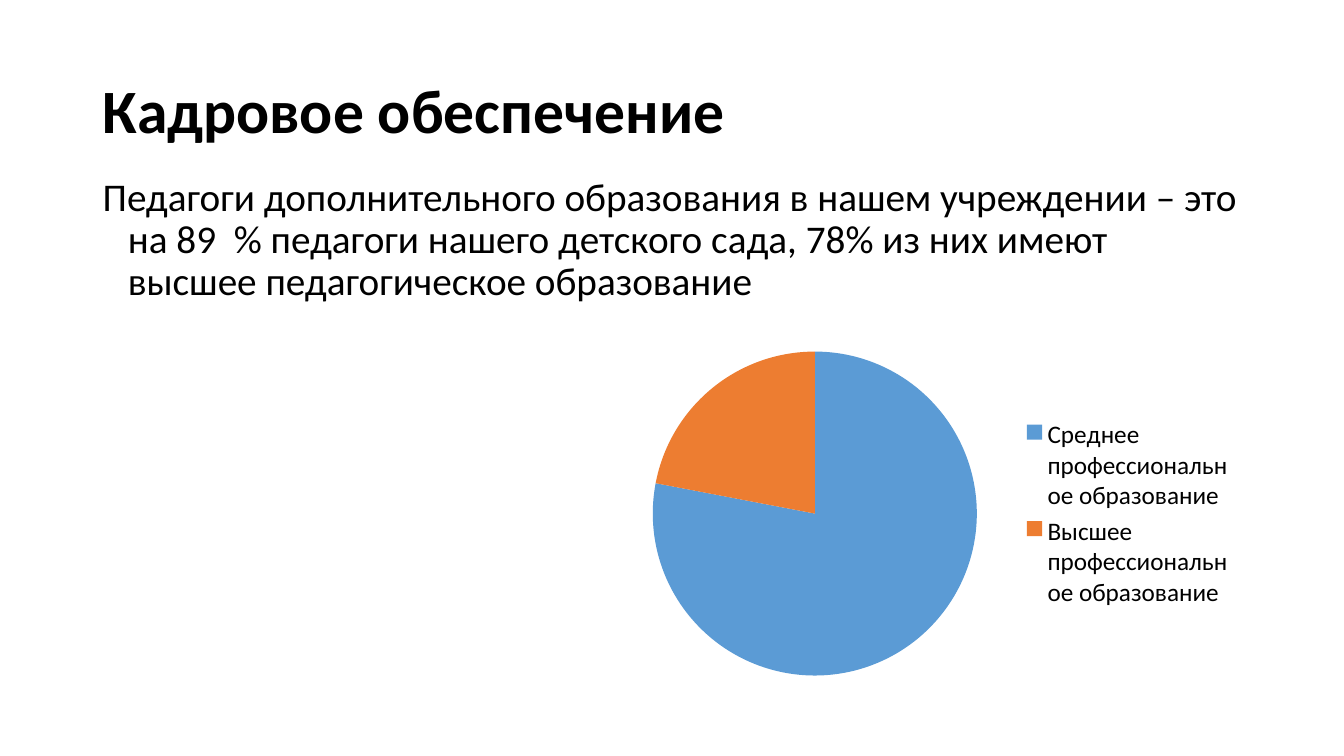
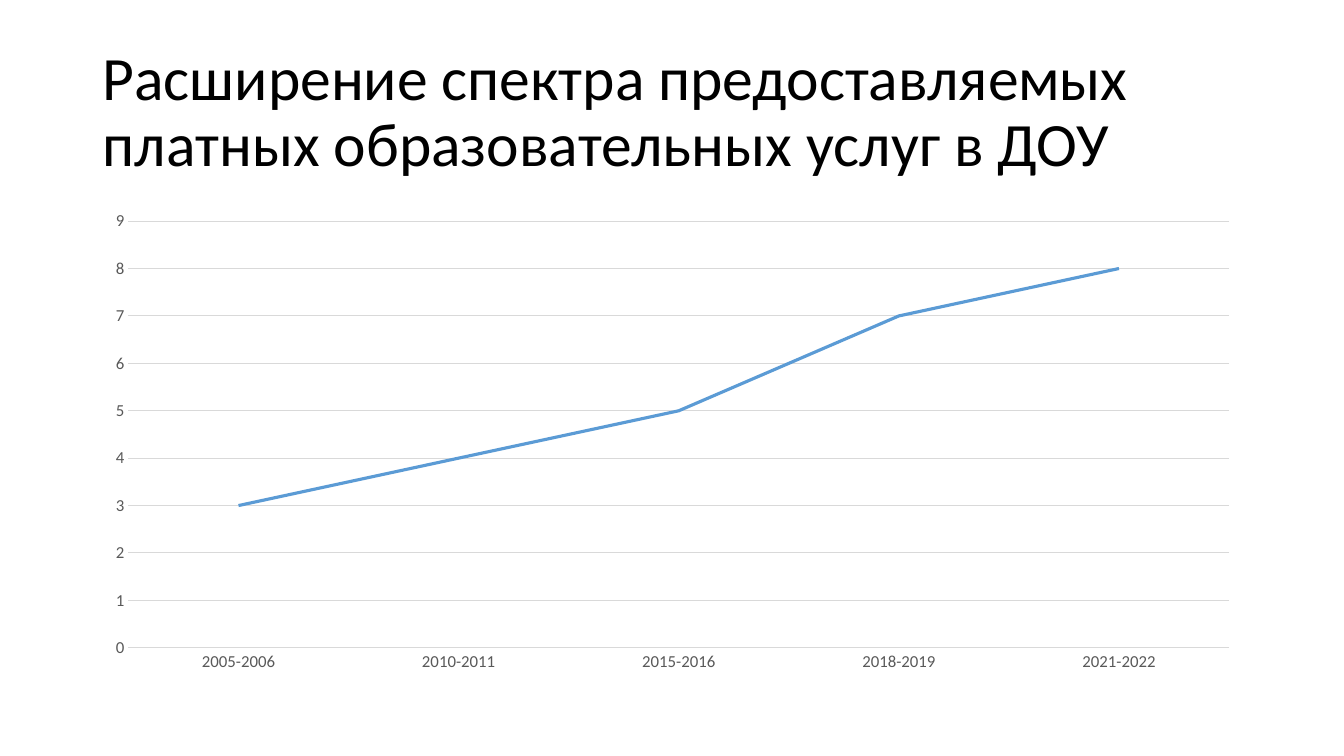
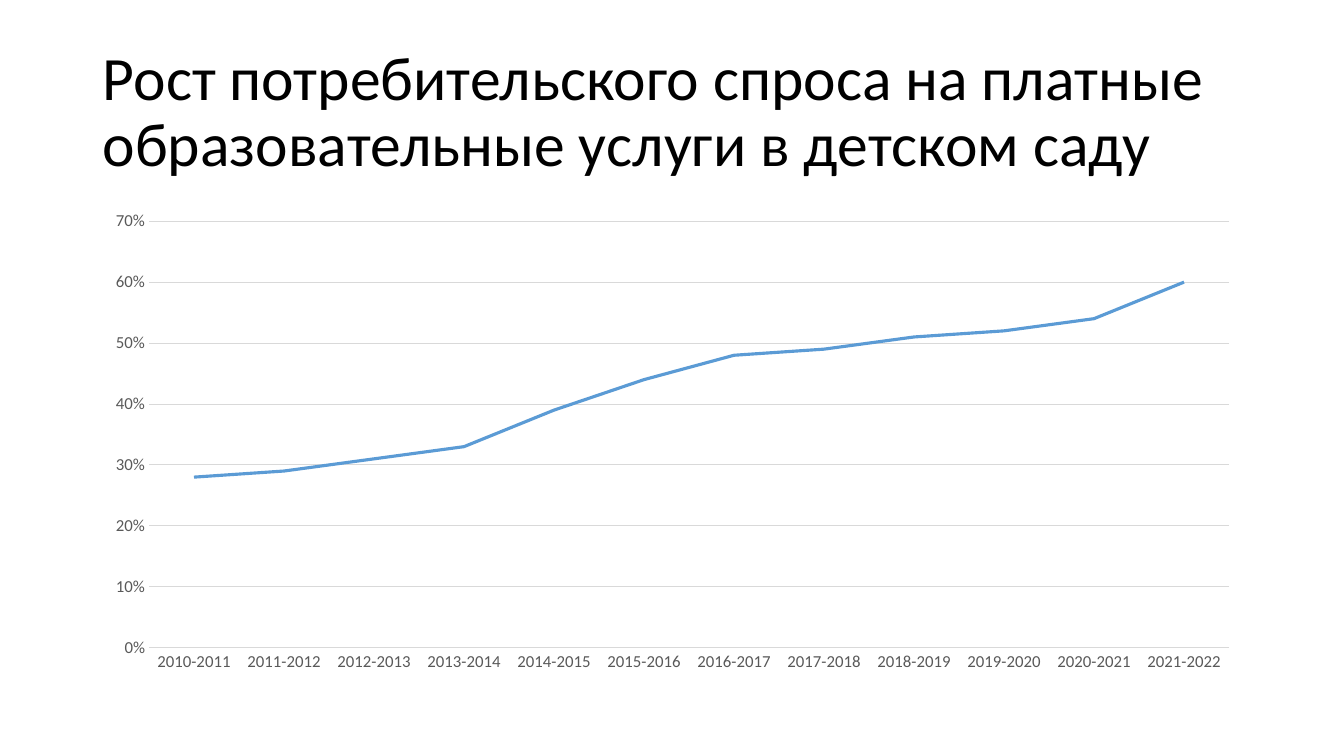
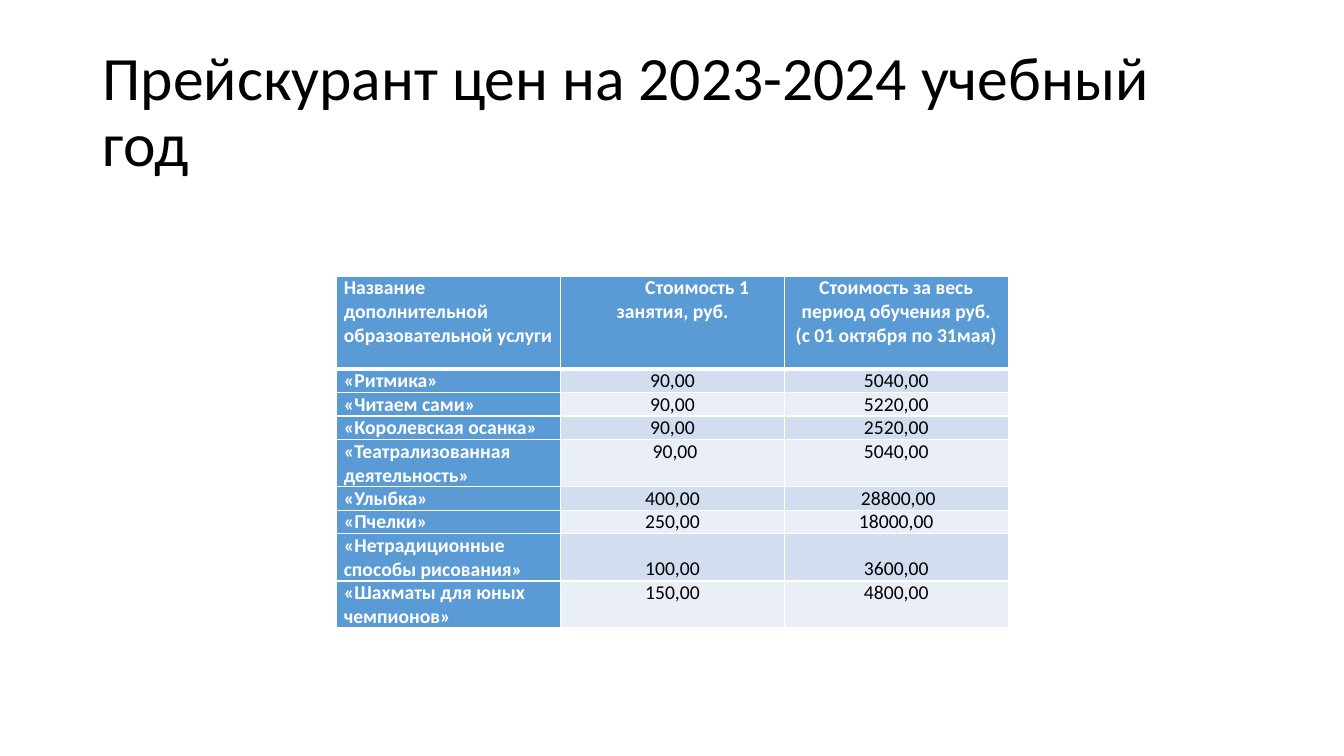
from lxml import etree
from pptx import Presentation
from pptx.chart.data import CategoryChartData
from pptx.dml.color import RGBColor
from pptx.enum.chart import XL_CHART_TYPE as CHART, XL_LEGEND_POSITION as LEGEND
from pptx.enum.chart import XL_MARKER_STYLE as MARKER, XL_TICK_MARK as TICK
from pptx.enum.text import MSO_ANCHOR as ANCHOR, PP_ALIGN as ALIGN
from pptx.oxml.ns import qn
from pptx.util import Inches, Pt

FONT = "Calibri"
COLORS = {"text": "000000", "white": "FFFFFF", "blue": "5B9BD5", "orange": "ED7D31",
          "axis": "595959", "grid": "D9D9D9", "band": "D2DEEF", "light": "EAEFF7"}
RGB = {name: RGBColor.from_string(value) for name, value in COLORS.items()}


def write(tf, text, size, color="text", bold=False, align=ALIGN.LEFT,
          spacing=1.0, left=0, indent=0):
    """Fill a text frame, one paragraph per line; left and indent are in inches."""
    tf.word_wrap = True
    for i, line in enumerate(text.split("\n")):
        p = tf.paragraphs[0] if i == 0 else tf.add_paragraph()
        p.alignment, p.line_spacing = align, spacing
        pPr = p._p.get_or_add_pPr()
        pPr.set("marL", str(Inches(left)))
        pPr.set("indent", str(Inches(indent)))
        r = p.add_run()
        r.text = line
        r.font.name, r.font.size, r.font.bold = FONT, Pt(size), bold
        r.font.color.rgb = RGB[color]


def style_font(font, size, color):
    font.name, font.size = FONT, Pt(size)
    font.color.rgb = RGB[color]


prs = Presentation()
prs.slide_width, prs.slide_height = Inches(13.33), Inches(7.5)

# Slides and titles
titles = [
    "Кадровое обеспечение",
    "Расширение спектра предоставляемых платных образовательных услуг в ДОУ",
    "Рост потребительского спроса на платные образовательные услуги в детском саду",
    "Прейскурант цен на 2023-2024 учебный год",
]
slides = []
for i, title in enumerate(titles):
    s = prs.slides.add_slide(prs.slide_layouts[6])
    tf = s.shapes.add_textbox(Inches(0.92), Inches(0.4), Inches(11.5), Inches(1.45)).text_frame
    tf.vertical_anchor = ANCHOR.MIDDLE
    write(tf, title, 44, bold=i == 0, spacing=0.9)
    slides.append(s)
staff, services, demand, prices = slides

# Staff: text and pie
body = staff.shapes.add_textbox(Inches(0.92), Inches(1.71), Inches(11.5), Inches(1.5))
write(body.text_frame,
      "Педагоги дополнительного образования в нашем учреждении – это на 89  % педагоги "
      "нашего детского сада, 78% из них имеют высшее педагогическое образование",
      28, spacing=0.9, left=0.25, indent=-0.25)

data = CategoryChartData()
data.categories = ["Среднее профессиональное образование", "Высшее профессиональное образование"]
data.add_series("Series 1", [78, 22])
pie = staff.shapes.add_chart(CHART.PIE, Inches(6.06), Inches(3.35),
                             Inches(6.28), Inches(3.49), data).chart
style_font(pie.font, 18, "text")
pie.has_title = False
pie.has_legend = True
pie.legend.position = LEGEND.RIGHT
pie.legend.include_in_layout = False
for i, color in enumerate(["blue", "orange"]):
    fill = pie.plots[0].series[0].points[i].format.fill
    fill.solid()
    fill.fore_color.rgb = RGB[color]

# Services and demand: line charts
line_charts = [
    (services, ["2005-2006", "2010-2011", "2015-2016", "2018-2019", "2021-2022"],
     [3, 4, 5, 7, 8], 9, 1, "General"),
    (demand, [f"{year}-{year + 1}" for year in range(2010, 2022)],
     [0.28, 0.29, 0.31, 0.33, 0.39, 0.44, 0.48, 0.49, 0.51, 0.52, 0.54, 0.6], 0.7, 0.1, "0%"),
]
for s, periods, values, top, step, number_format in line_charts:
    data = CategoryChartData(number_format=number_format)
    data.categories = periods
    data.add_series("Series 1", values)
    chart = s.shapes.add_chart(CHART.LINE, Inches(0.92), Inches(2),
                               Inches(11.5), Inches(4.76), data).chart
    style_font(chart.font, 10, "text")
    chart.has_title = chart.has_legend = False
    chart.plots[0].vary_by_categories = False
    series = chart.plots[0].series[0]
    series.smooth = False
    series.marker.style = MARKER.NONE
    series.format.line.color.rgb = RGB["blue"]
    series.format.line.width = Pt(2.25)

    cat_axis, val_axis = chart.category_axis, chart.value_axis
    for axis in (cat_axis, val_axis):
        axis.major_tick_mark = axis.minor_tick_mark = TICK.NONE
        style_font(axis.tick_labels.font, 12, "axis")
    val_axis.minimum_scale, val_axis.maximum_scale, val_axis.major_unit = 0, top, step
    val_axis.tick_labels.number_format = number_format
    val_axis.tick_labels.number_format_is_linked = False
    val_axis.format.line.fill.background()
    for line in (cat_axis.format.line, val_axis.major_gridlines.format.line):
        line.color.rgb = RGB["grid"]
        line.width = Pt(0.75)

# Prices: table
rows = [
    ("Название дополнительной образовательной услуги", "Стоимость 1 занятия, руб.",
     "Стоимость за весь период обучения руб.\n(с 01 октября по 31мая)"),
    ("«Ритмика»", "90,00", "5040,00"),
    ("«Читаем сами»", "90,00", "5220,00"),
    ("«Королевская осанка»", "90,00", "2520,00"),
    ("«Театрализованная деятельность»", "90,00", "5040,00"),
    ("«Улыбка»", "400,00", "28800,00"),
    ("«Пчелки»", "250,00", "18000,00"),
    ("«Нетрадиционные способы рисования»", "100,00", "3600,00"),
    ("«Шахматы для юных чемпионов»", "150,00", "4800,00"),
]
line_counts = [4, 1, 1, 1, 2, 1, 1, 2, 2]
line_height, col_width = 0.23, 2.22
drawing_row = 7
cell_formats = {
    (0, 1): {"indent": 0.49},
    (4, 1): {"indent": 0.05},
    (5, 2): {"align": ALIGN.LEFT, "left": 0.69},
}
table = prices.shapes.add_table(len(rows), 3, Inches(3.34), Inches(2.74), Inches(3 * col_width),
                                Inches(line_height * sum(line_counts))).table
for column in table.columns:
    column.width = Inches(col_width)
for i, row in enumerate(rows):
    table.rows[i].height = Inches(line_height * line_counts[i])
    for j, text in enumerate(row):
        cell = table.cell(i, j)
        cell.margin_left = cell.margin_right = Inches(0.07)
        cell.margin_top = cell.margin_bottom = 0
        is_head = i == 0 or j == 0
        cell.fill.solid()
        cell.fill.fore_color.rgb = RGB["blue" if is_head else "band" if i % 2 else "light"]
        if i == drawing_row and j > 0:
            cell.vertical_anchor = ANCHOR.BOTTOM
        fmt = {"align": ALIGN.CENTER if j else ALIGN.LEFT, **cell_formats.get((i, j), {})}
        write(cell.text_frame, text, 14, "white" if is_head else "text", is_head, **fmt)

        widths = {"lnL": 1, "lnR": 1, "lnT": 3 if i == 1 else 1, "lnB": 3 if i == 0 else 1}
        tcPr = cell._tc.get_or_add_tcPr()
        for k, (side, width) in enumerate(widths.items()):
            ln = etree.Element(qn(f"a:{side}"), w=str(Pt(width)))
            fill = etree.SubElement(ln, qn("a:solidFill"))
            etree.SubElement(fill, qn("a:srgbClr"), val=COLORS["white"])
            tcPr.insert(k, ln)

prs.save("out.pptx")
